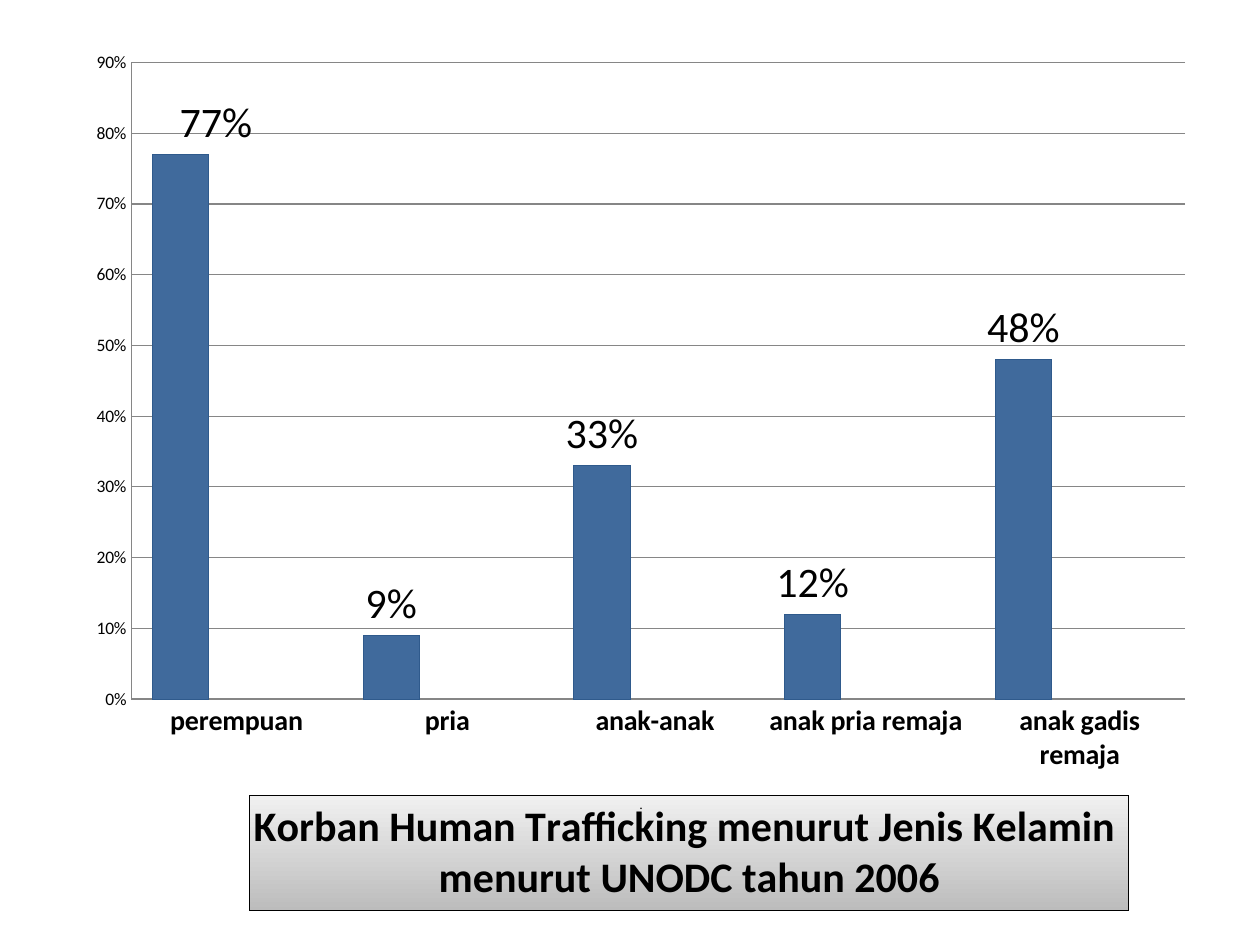
"""Build a slide with a column chart of trafficking victims by gender."""
import pptx
import pptx.chart.data
import pptx.dml.color
import pptx.enum.chart
import pptx.oxml
import pptx.oxml.ns
import pptx.util

COLORS = {
    "text": "000000",
    "bar": "406A9C",
    "bar edge": "2F5A8C",
    "second": "C0504D",
    "third": "9BBB59",
    "grid": "868686",
    "title top": "F0F0F0",
    "title bottom": "BCBCBC",
}
VICTIMS = {
    "perempuan": 0.77,
    "pria": 0.09,
    "anak-anak ": 0.33,
    "anak pria remaja ": 0.12,
    "anak gadis remaja": 0.48,
}
TITLE_LINES = ["Korban Human Trafficking menurut Jenis Kelamin ", "menurut UNODC tahun 2006"]


def color(name):
    return pptx.dml.color.RGBColor.from_string(COLORS[name])


def set_layout(parent, index, **settings):
    for old_layout in parent.findall(pptx.oxml.ns.qn("c:layout")):
        parent.remove(old_layout)
    items = "".join(f'<c:{key} val="{value}"/>' for key, value in settings.items())
    parent.insert(index, pptx.oxml.parse_xml(
        f'<c:layout {pptx.oxml.ns.nsdecls("c")}><c:manualLayout>{items}</c:manualLayout></c:layout>'))


presentation = pptx.Presentation()
presentation.slide_width = pptx.util.Inches(10)
presentation.slide_height = pptx.util.Inches(7.5)
width, height = presentation.slide_width, presentation.slide_height
slide = presentation.slides.add_slide(presentation.slide_layouts[6])

chart_data = pptx.chart.data.CategoryChartData(number_format="0%")
chart_data.categories = list(VICTIMS)
chart_data.add_series("Series 1", list(VICTIMS.values()))
for name in ("Series 2", "Series 3"):
    chart_data.add_series(name, [None] * len(VICTIMS))

chart = slide.shapes.add_chart(
    pptx.enum.chart.XL_CHART_TYPE.COLUMN_CLUSTERED,
    int(width * 0.025), int(height * 0.044), int(width * 0.942), int(height * 0.923),
    chart_data).chart
chart.has_legend = False
chart.font.name = "Calibri"
chart.font.size = pptx.util.Pt(10)
chart.font.color.rgb = color("text")

plot = chart.plots[0]
plot.gap_width = 75
plot.overlap = 0
plot.vary_by_categories = False
for series, name in zip(plot.series, ("bar", "second", "third")):
    series.format.fill.solid()
    series.format.fill.fore_color.rgb = color(name)
victims = plot.series[0]
victims.format.line.color.rgb = color("bar edge")
set_layout(chart._chartSpace.chart.plotArea, 0, layoutTarget="inner", xMode="edge",
           yMode="edge", x=0.084, y=0.024, w=0.888, h=0.73)

labels = victims.data_labels
labels.show_value = True
labels.number_format = "0%"
labels.number_format_is_linked = False
first_label = victims.points[0].data_label
for label in (labels, first_label):
    label.position = pptx.enum.chart.XL_LABEL_POSITION.OUTSIDE_END
    label.font.size = pptx.util.Pt(24)
    label.font.color.rgb = color("text")
set_layout(labels._element[0], 1, x=0.03, y=0)

value_axis, category_axis = chart.value_axis, chart.category_axis
value_axis.minimum_scale, value_axis.maximum_scale = 0, 0.9
value_axis.major_unit = 0.1
value_axis.has_major_gridlines = True
value_axis.tick_labels.number_format = "0%"
value_axis.tick_labels.number_format_is_linked = False
value_axis.major_gridlines.format.line.color.rgb = color("grid")
for axis in (value_axis, category_axis):
    axis.major_tick_mark = pptx.enum.chart.XL_TICK_MARK.NONE
    axis.format.line.color.rgb = color("grid")
category_axis.tick_labels.font.size = pptx.util.Pt(16)
category_axis.tick_labels.font.bold = True

axis_title = category_axis.axis_title
axis_title.text_frame.text = "."
axis_font = axis_title.text_frame.paragraphs[0].font
axis_font.name = "Times New Roman"
axis_font.size = pptx.util.Pt(8)
axis_font.bold = False
set_layout(axis_title._element, 1, xMode="edge", yMode="edge", x=0.51, y=0.86)

chart.has_title = True
title = chart.chart_title
title.text_frame.text = "\n".join(TITLE_LINES)
for paragraph in title.text_frame.paragraphs:
    paragraph.font.name = "Calibri"
    paragraph.font.size = pptx.util.Pt(24)
    paragraph.font.bold = True
    paragraph.font.color.rgb = color("text")
title.format.fill.gradient()
title.format.fill.gradient_angle = 270
for stop, name in zip(title.format.fill.gradient_stops, ("title top", "title bottom")):
    stop.color.rgb = color(name)
title.format.line.color.rgb = color("text")
set_layout(title._element, 1, xMode="edge", yMode="edge", x=0.184, y=0.865)
title._element.find(pptx.oxml.ns.qn("c:overlay")).set("val", "1")

presentation.save("out.pptx")
